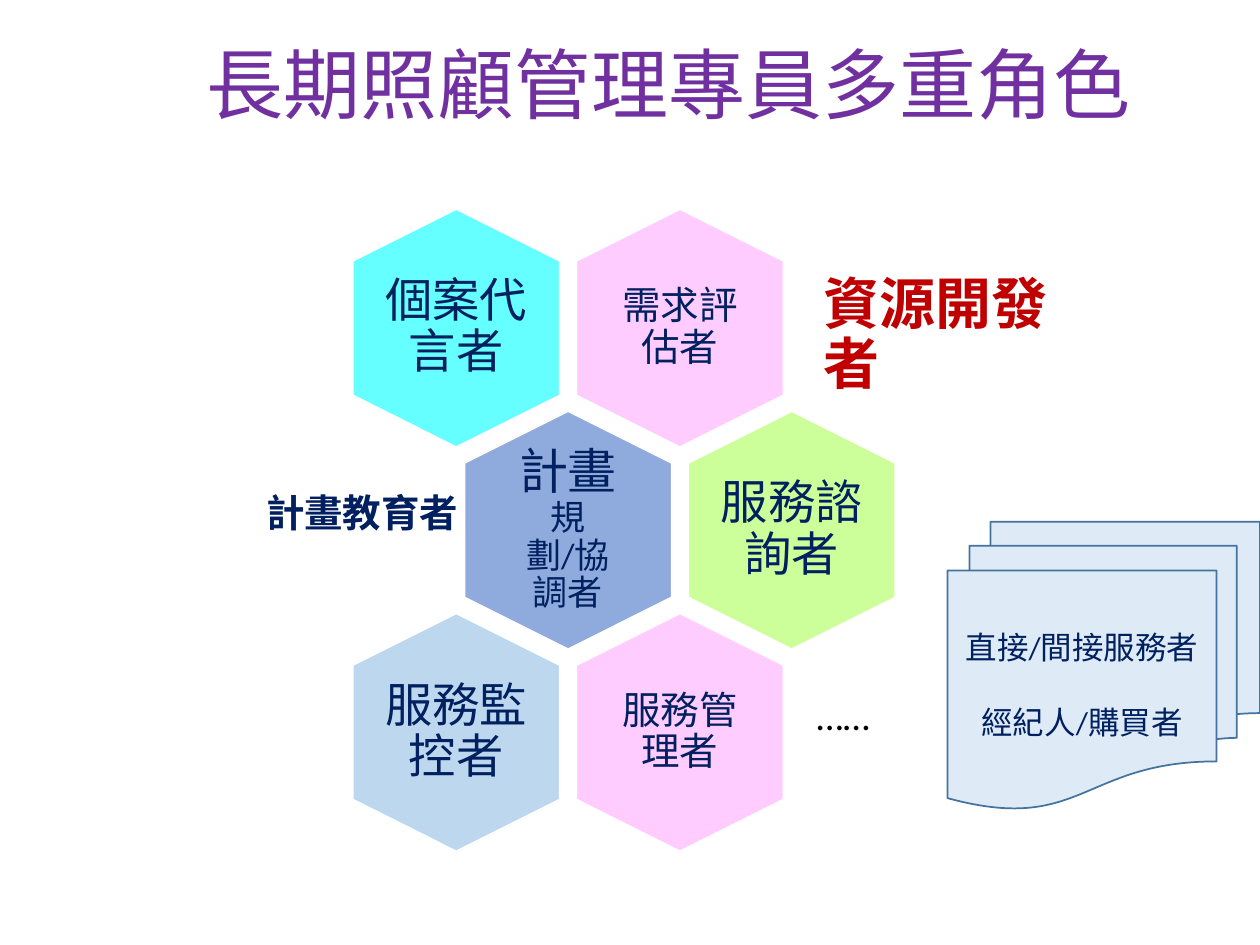
from pptx import Presentation
from pptx.dml.color import RGBColor
from pptx.enum import shapes, text
from pptx.util import Pt

HUES = {
    "title": "7030A0", "ink": "002060", "red": "C00000", "black": "000000",
    "white": "FFFFFF", "pink": "FFCCFF", "cyan": "66FFFF", "blue": "8FAADC",
    "lime": "CCFF99", "sky": "BDD7EE", "page": "DEEBF7", "edge": "43739E",
}
LEFT, MID, RIGHT = text.PP_ALIGN.LEFT, text.PP_ALIGN.CENTER, text.PP_ALIGN.RIGHT
CELLS = [
    (0, 0, "cyan", [("個案代言者", 27)], 0),
    (0, 1, "pink", [("需求評估者", 22)], 6.6),
    (1, 0, "blue", [("計畫", 28), ("規劃/協調者", 20)], 8.4),
    (1, 1, "lime", [("服務諮詢者", 27)], 0),
    (2, 0, "sky", [("服務監控者", 27)], 0),
    (2, 1, "pink", [("服務管理者", 22)], 6.6),
]
NOTES = [
    ((259.2, 31.7, 151.9, 82), "資源開發者", 32, "red", True, LEFT, 9.6),
    ((-79.9, 134, 146.9, 82), "計畫教育者", 22, "ink", True, RIGHT, 6.6),
    ((258.5, 249.8, 151.9, 82), "……", 22, "black", False, LEFT, 6.6),
]


def tint(hue):
    """Return the named colour."""
    return RGBColor.from_string(HUES[hue])


def style(run, size, hue, bold=False, face="Calibri"):
    """Set the font of one run."""
    font = run.font
    font.name, font.size, font.bold = face, Pt(size), bold
    font.color.rgb = tint(hue)


def paint(shape, fill, edge):
    """Give a shape a flat fill and a thin outline."""
    shape.shadow.inherit = False
    shape.fill.solid()
    shape.fill.fore_color.rgb = tint(fill)
    shape.line.color.rgb = tint(edge)
    shape.line.width = Pt(1)


def label(slide, box, parts, hue, bold=False, align=MID, inset=0, anchor=text.MSO_ANCHOR.MIDDLE, face="Calibri"):
    """Place one wrapped paragraph made of (words, size) parts."""
    frame = slide.shapes.add_textbox(*map(Pt, box)).text_frame
    frame.word_wrap = True
    frame.vertical_anchor = anchor
    frame.margin_left = frame.margin_right = Pt(inset)
    frame.margin_top = frame.margin_bottom = Pt(inset)
    para = frame.paragraphs[0]
    para.alignment, para.line_spacing = align, 0.9
    for words, size in parts:
        run = para.add_run()
        run.text = words
        style(run, size, hue, bold, face)


def title(slide, box):
    """Place the heading."""
    label(slide, box, [("長期照顧管理專員多重角色", 44)], "title", align=LEFT,
          inset=5, anchor=text.MSO_ANCHOR.TOP, face="Noto Sans CJK SC")


def comb(slide, box):
    """Place the honeycomb of roles with the notes beside it."""
    left, top, wide, high = box
    long, short = 136, 118.4
    across, down = 127.8, (high - long) / 2
    for row, col, hue, parts, inset in CELLS:
        x = left + short / 2 + col * across + row % 2 * across / 2
        y = top + long / 2 + row * down
        cell = slide.shapes.add_shape(
            shapes.MSO_SHAPE.HEXAGON, Pt(x - long / 2), Pt(y - short / 2), Pt(long), Pt(short))
        cell.rotation = 90
        paint(cell, hue, "white")
        label(slide, (x - 40.7, y - 46.8, 81.4, 93.6), parts, "ink", inset=inset)
    for (x, y, w, h), words, size, hue, bold, align, inset in NOTES:
        label(slide, (left + x, top + y, w, h), [(words, size)], hue, bold, align, inset)


def stack(slide, box):
    """Place the stack of pages with its two lines."""
    pages = slide.shapes.add_shape(shapes.MSO_SHAPE.FLOWCHART_MULTIDOCUMENT, *map(Pt, box))
    paint(pages, "page", "edge")
    frame = pages.text_frame
    frame.word_wrap = True
    frame.vertical_anchor = text.MSO_ANCHOR.MIDDLE
    frame.text = "直接/間接服務者\n經紀人/購買者"
    for para in frame.paragraphs:
        para.alignment = MID
        style(para.runs[0], 18, "ink")
    frame.paragraphs[1].space_before = Pt(21.7)


def main():
    """Build the slide and save it."""
    deck = Presentation()
    deck.slide_width, deck.slide_height = Pt(720), Pt(540)
    slide = deck.slides.add_slide(deck.slide_layouts[6])
    title(slide, (113, 21.6, 590.4, 90))
    comb(slide, (201.5, 119.5, 310, 367))
    stack(slide, (541.4, 298.1, 178.6, 164.2))
    deck.save("out.pptx")


if __name__ == "__main__":
    main()
